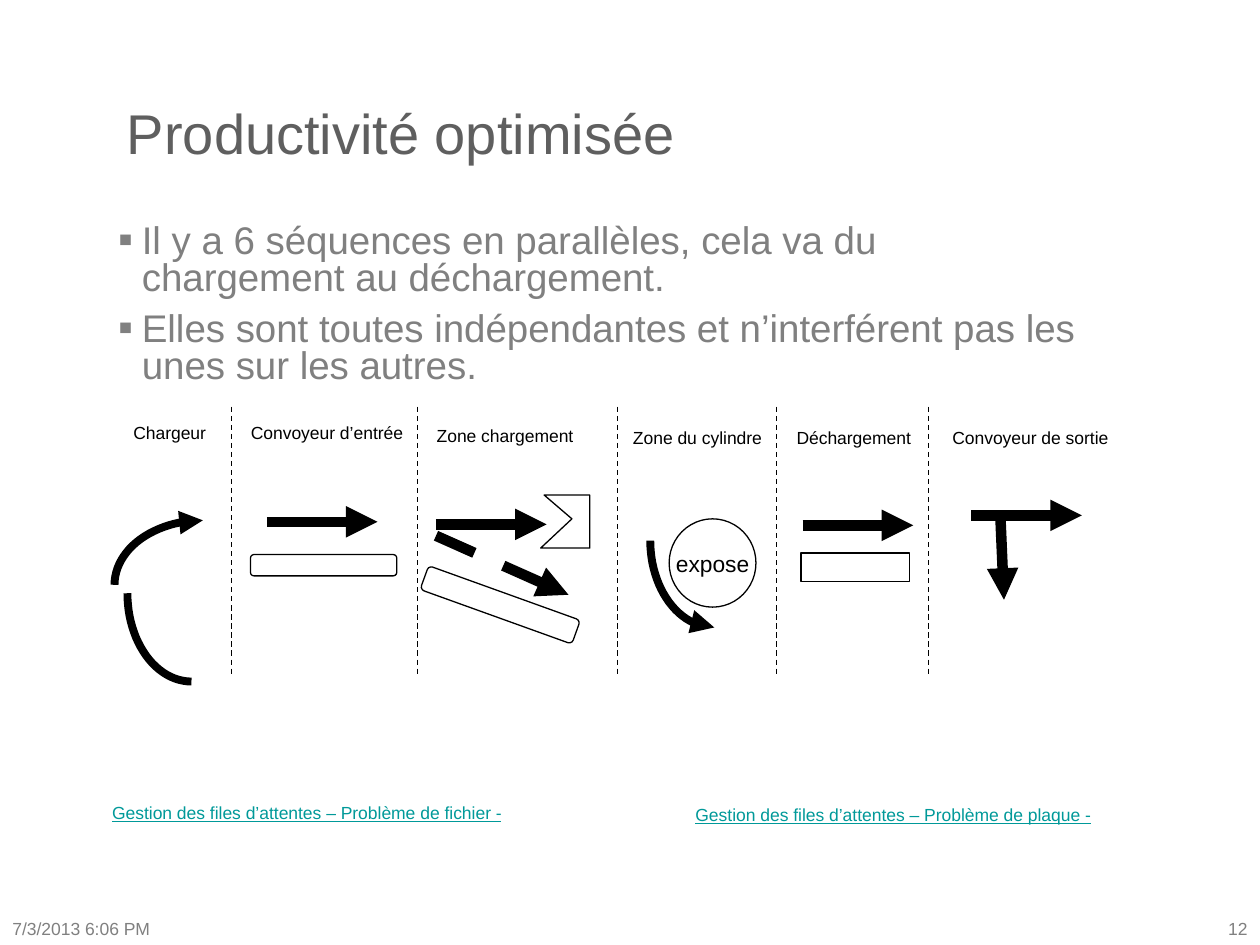
from dataclasses import dataclass
from math import cos, pi, sin

from lxml.etree import SubElement
from pptx import Presentation
from pptx.dml.color import RGBColor as RGB
from pptx.enum.dml import MSO_LINE
from pptx.enum.shapes import MSO_CONNECTOR, MSO_SHAPE as SHAPE
from pptx.enum.text import MSO_ANCHOR as ANCHOR, PP_ALIGN as ALIGN
from pptx.oxml.ns import qn
from pptx.util import Cm, Pt


@dataclass(frozen=True)
class Theme:
    font: str = "Arial"
    ink: RGB = RGB(0, 0, 0)
    title: RGB = RGB(0x5F, 0x5F, 0x5F)
    grey: RGB = RGB(0x80, 0x80, 0x80)
    link: RGB = RGB(0, 0x99, 0x99)
    title_size: float = 32
    body_size: float = 22
    expose_size: float = 13
    small_size: float = 10
    thin: float = 0.75
    curve: float = 4.5
    arrow: float = 6


T = Theme()


def apply(target, **values):
    for name, value in values.items():
        setattr(target, name, value)


def set_font(p, size, color, **extra):
    for r in p.runs:
        apply(r.font, name=T.font, size=Pt(size), **extra)
        r.font.color.rgb = color


def add_text(shapes, box, text, size, color, anchor=ANCHOR.BOTTOM,
             align=ALIGN.LEFT, wrap=True, spacing=None, **font):
    tb = shapes.add_textbox(*map(Cm, box))
    tf = tb.text_frame
    apply(tf, word_wrap=wrap, vertical_anchor=anchor, text=text)
    for p in tf.paragraphs:
        apply(p, alignment=align, line_spacing=spacing)
        set_font(p, size, color, **font)
    return tf


def set_margins(tf):
    apply(tf, margin_left=Cm(0.18), margin_right=Cm(0.18),
          margin_top=Cm(0.1), margin_bottom=Cm(0.1))


def add_bullet(p):
    pPr = p._p.get_or_add_pPr()
    pPr.set("marL", str(Cm(0.48)))
    pPr.set("indent", str(-Cm(0.48)))
    color = SubElement(pPr, qn("a:buClr"))
    SubElement(color, qn("a:srgbClr"), val=str(T.grey))
    SubElement(pPr, qn("a:buSzPct"), val="110000")
    SubElement(pPr, qn("a:buFont"), typeface=T.font)
    SubElement(pPr, qn("a:buChar"), char="▪")


def style_line(shape, width, dash=None, arrow=False):
    line = shape.line
    line.color.rgb = T.ink
    apply(line, width=Pt(width), dash_style=dash)
    if arrow:
        SubElement(line._get_or_add_ln(), qn("a:tailEnd"), type="triangle")


def add_line(shapes, start, end, width, dash=None, arrow=False):
    c = shapes.add_connector(MSO_CONNECTOR.STRAIGHT, *map(Cm, start + end))
    style_line(c, width, dash, arrow)
    SubElement(c._element.spPr, qn("a:effectLst"))


def add_outline(shapes, kind, box, rotation=0):
    sp = shapes.add_shape(kind, *map(Cm, box))
    sp.shadow.inherit = False
    sp.fill.background()
    sp.rotation = rotation
    style_line(sp, T.thin)
    return sp


def add_path(shapes, points, width, close=False, arrow=False):
    builder = shapes.build_freeform(*map(Cm, points[0]))
    builder.add_line_segments([tuple(map(Cm, pt)) for pt in points[1:]], close)
    sp = builder.convert_to_shape()
    sp.shadow.inherit = False
    sp.fill.background()
    style_line(sp, width, arrow=arrow)


def quarter_arc(start, end, steps=24):
    """Points that leave start vertically and reach end horizontally."""
    (x0, y0), (x1, y1) = start, end
    angles = [i * pi / 2 / steps for i in range(steps + 1)]
    return [(x1 - (x1 - x0) * cos(a), y0 + (y1 - y0) * sin(a)) for a in angles]


def footer(s, box):
    x, y, w, h = box
    part = 5.92
    add_text(s.shapes, (x, y, part, h), "7/3/2013 6:06 PM", T.small_size, T.grey)
    add_text(s.shapes, (x + w - part, y, part, h), "12", T.small_size, T.grey,
             align=ALIGN.RIGHT)


def title(s, box):
    add_text(s.shapes, box, "Productivité optimisée", T.title_size, T.title,
             spacing=0.85)


def body(s, box):
    text = ("Il y a 6 séquences en parallèles, cela va du chargement au "
            "déchargement.\nElles sont toutes indépendantes et n’interférent "
            "pas les unes sur les autres.")
    tf = add_text(s.shapes, box, text, T.body_size, T.grey, ANCHOR.TOP, spacing=0.8)
    for i, p in enumerate(tf.paragraphs):
        p.space_before = Pt(7.7 if i else 0)
        add_bullet(p)


def sequence_diagram(s, box):
    left, top, _, height = box
    shapes = s.shapes.add_group_shape().shapes

    def at(x, y, *size):
        return (left + x, top + y, *size)

    # Stage names
    stages = [("Chargeur", 0, 0), ("Convoyeur d’entrée", 3.17, 0),
              ("Zone chargement", 6.76, 0.05), ("Zone du cylindre", 10.64, 0.1),
              ("Déchargement", 13.79, 0.1), ("Convoyeur de sortie", 17.35, 0.1)]
    for name, x, y in stages:
        set_margins(add_text(shapes, at(x, y, 3.84, 1.55), name, T.small_size, T.ink,
                             ANCHOR.MIDDLE, ALIGN.CENTER, wrap=False))

    # Plates and loading notch
    for kind, plate, angle in [(SHAPE.ROUNDED_RECTANGLE, (3.55, 3.23, 2.95, 0.43), 0),
                               (SHAPE.ROUNDED_RECTANGLE, (6.96, 3.99, 3.25, 0.51), 19.8),
                               (SHAPE.RECTANGLE, (14.65, 3.2, 2.18, 0.58), 0)]:
        add_outline(shapes, kind, at(*plate), angle)
    notch = [(10.39, 2.03), (10.39, 3.1), (9.4, 3.1), (10.03, 2.51), (9.47, 2.03)]
    add_path(shapes, [at(*pt) for pt in notch], T.thin, close=True)

    # Cylinder
    tf = add_outline(shapes, SHAPE.OVAL, at(11.99, 2.51, 1.75, 1.78)).text_frame
    apply(tf, word_wrap=False, vertical_anchor=ANCHOR.MIDDLE, text="expose")
    set_margins(tf)
    tf.paragraphs[0].alignment = ALIGN.CENTER
    set_font(tf.paragraphs[0], T.expose_size, T.ink)

    # Curved movements
    for start, end, arrow in [((0.81, 3.84), (2.59, 2.54), True),
                              ((1.07, 4.01), (2.36, 5.79), False),
                              ((11.61, 2.95), (12.9, 4.7), True)]:
        add_path(shapes, quarter_arc(at(*start), at(*end)), T.curve, arrow=arrow)

    # Straight movements
    for x, y in [(3.88, 2.57), (7.29, 2.62), (14.68, 2.64), (18.08, 2.44)]:
        add_line(shapes, at(x, y), at(x + 2.23, y), T.arrow, arrow=True)
    add_line(shapes, at(7.29, 2.85), at(9.96, 4.04), T.arrow, MSO_LINE.DASH, True)
    add_line(shapes, at(18.67, 2.54), at(18.74, 4.14), T.arrow, arrow=True)

    # Stage separators
    for x in (3.17, 6.91, 10.95, 14.15, 17.22):
        add_line(shapes, at(x, 0.25), at(x, height), T.thin, MSO_LINE.DASH)


def related_topics(s, box):
    x, y, w, h = box
    part = 8.92
    for topic, left, top in [("fichier", x, y), ("plaque", x + w - part, y + 0.05)]:
        add_text(s.shapes, (left, top, part, h),
                 f"Gestion des files d’attentes – Problème de {topic} -",
                 T.small_size, T.link, spacing=0.85, underline=True)


def main():
    prs = Presentation()
    apply(prs, slide_width=Cm(25.4), slide_height=Cm(19.05))
    s = prs.slides.add_slide(prs.slide_layouts[6])
    footer(s, (0, 17.73, 25.4, 1.32))
    title(s, (2.31, 2.01, 22.02, 1.47))
    body(s, (2.13, 4.42, 19.96, 11.71))
    sequence_diagram(s, (1.5, 7.95, 21.19, 5.69))
    related_topics(s, (2.01, 15.8, 20.68, 0.91))
    prs.save("out.pptx")


if __name__ == "__main__":
    main()
